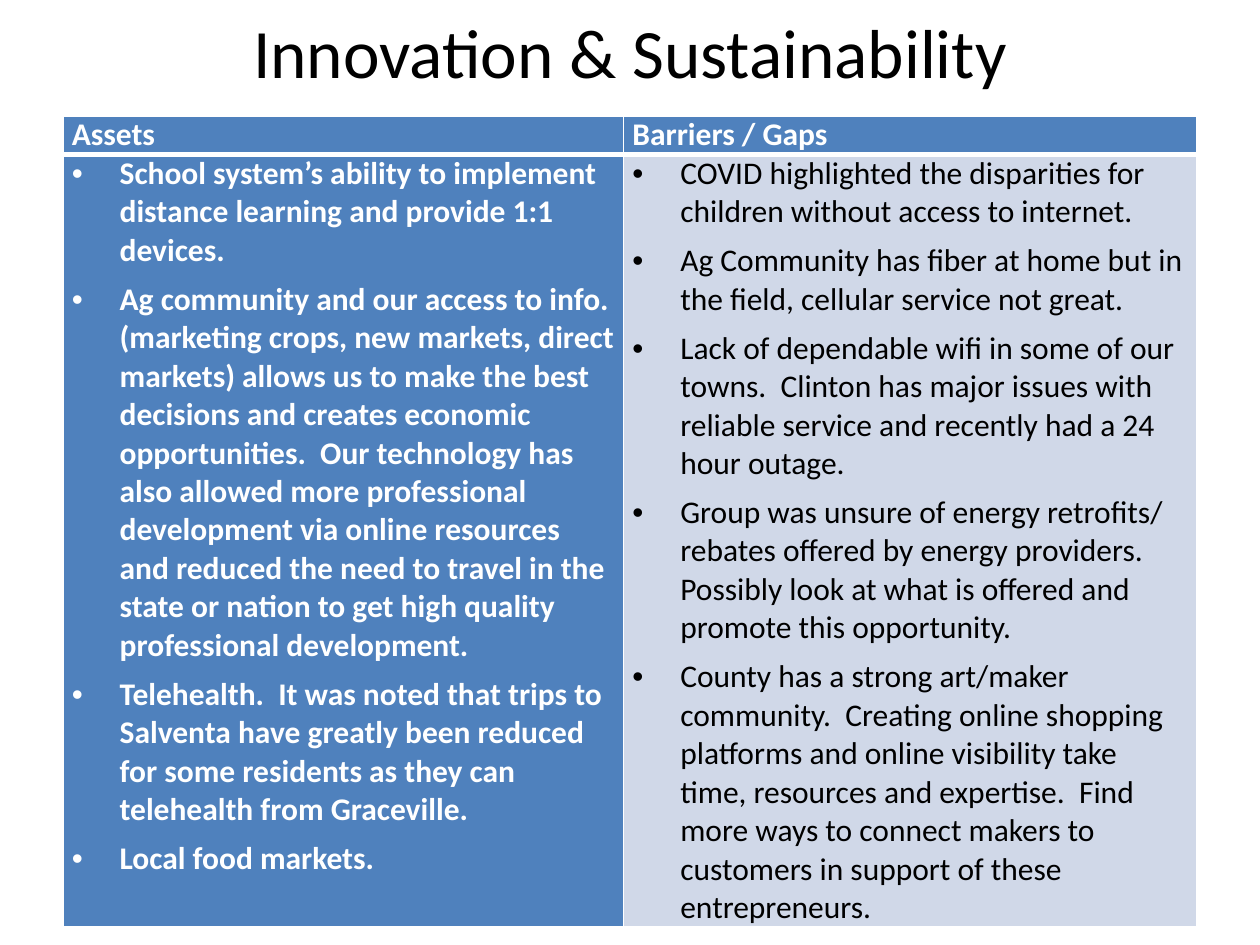
from lxml.etree import SubElement
from pptx import Presentation
from pptx.dml.color import RGBColor
from pptx.enum.text import MSO_ANCHOR, MSO_AUTO_SIZE, PP_ALIGN
from pptx.oxml.ns import qn
from pptx.util import Inches, Pt

BLACK = RGBColor(0x00, 0x00, 0x00)
WHITE = RGBColor(0xFF, 0xFF, 0xFF)
BLUE = RGBColor(0x4F, 0x81, 0xBD)
PALE = RGBColor(0xD0, 0xD8, 0xE8)

ASSETS = [
    "School system’s ability to implement distance learning and provide 1:1 devices.",
    "Ag community and our access to info. (marketing crops, new markets, direct markets) "
    "allows us to make the best decisions and creates economic opportunities.  Our technology "
    "has also allowed more professional development via online resources and reduced the need "
    "to travel in the state or nation to get high quality professional development.",
    "Telehealth.  It was noted that trips to Salventa have greatly been reduced for some "
    "residents as they can telehealth from Graceville.",
    "Local food markets.",
]
BARRIERS = [
    "COVID highlighted the disparities for children without access to internet.",
    "Ag Community has fiber at home but in the field, cellular service not great.",
    "Lack of dependable wifi in some of our towns.  Clinton has major issues with reliable "
    "service and recently had a 24 hour outage.",
    "Group was unsure of energy retrofits/ rebates offered by energy providers.  Possibly look "
    "at what is offered and promote this opportunity.",
    "County has a strong art/maker community.  Creating online shopping platforms and online "
    "visibility take time, resources and expertise.  Find more ways to connect makers to "
    "customers in support of these entrepreneurs.",
]


class SlideBuilder:
    font = "Calibri"
    text_size = 18
    title_size = 39.6
    indent = Inches(0.38)

    def __init__(self, slide):
        self.s = slide

    def add_run(self, p, text, size, color, bold=False):
        r = p.add_run()
        r.text = text
        r.font.name = self.font
        r.font.size = Pt(size)
        r.font.bold = bold
        r.font.color.rgb = color

    def title(self, text, left, top, width, height):
        sp = self.s.shapes.title
        sp.left, sp.top = Inches(left), Inches(top)
        sp.width, sp.height = Inches(width), Inches(height)
        tf = sp.text_frame
        tf.auto_size = MSO_AUTO_SIZE.NONE
        tf.vertical_anchor = MSO_ANCHOR.MIDDLE
        p = tf.paragraphs[0]
        p.alignment = PP_ALIGN.CENTER
        self.add_run(p, text, self.title_size, BLACK)

    def table(self, left, top, col_widths, row_heights):
        frame = self.s.shapes.add_table(
            len(row_heights), len(col_widths), Inches(left), Inches(top),
            Inches(sum(col_widths)), Inches(sum(row_heights)))
        table = frame.table
        for col, width in zip(table.columns, col_widths):
            col.width = Inches(width)
        for row, height in zip(table.rows, row_heights):
            row.height = Inches(height)
        return table

    def bullet(self, p):
        pPr = p._p.get_or_add_pPr()
        pPr.set("marL", str(self.indent))
        pPr.set("indent", str(-self.indent))
        p.space_after = Pt(6)
        SubElement(pPr, qn("a:buFont"), typeface="Arial")
        SubElement(pPr, qn("a:buChar"), char="•")

    def borders(self, cell, top, bottom):
        tcPr = cell._tc.get_or_add_tcPr()
        for side, width in (("L", 1), ("R", 1), ("T", top), ("B", bottom)):
            ln = SubElement(tcPr, qn(f"a:ln{side}"), w=str(Pt(width)))
            fill = SubElement(ln, qn("a:solidFill"))
            SubElement(fill, qn("a:srgbClr"), val=str(WHITE))

    def cell(self, cell, lines, fill, color, bold, bulleted=False, top=1, bottom=1):
        cell.margin_left = cell.margin_right = Inches(0.07)
        cell.margin_top = cell.margin_bottom = 0
        self.borders(cell, top, bottom)
        cell.fill.solid()
        cell.fill.fore_color.rgb = fill
        tf = cell.text_frame
        for i, text in enumerate(lines):
            p = tf.add_paragraph() if i else tf.paragraphs[0]
            if bulleted:
                self.bullet(p)
            self.add_run(p, text, self.text_size, color, bold)


def main():
    prs = Presentation()
    prs.slide_width, prs.slide_height = Inches(10), Inches(7.5)
    b = SlideBuilder(prs.slides.add_slide(prs.slide_layouts[5]))

    # Title
    b.title("Innovation & Sustainability", 0.5, 0.09, 9, 0.62)

    # Two-column comparison: header row, then bulleted row
    table = b.table(0.5, 0.92, [4.45, 4.55], [0.3, 6.03])
    columns = [
        ("Assets", ASSETS, BLUE, WHITE, True),
        ("Barriers / Gaps", BARRIERS, PALE, BLACK, False),
    ]
    for i, (heading, items, fill, color, bold) in enumerate(columns):
        b.cell(table.cell(0, i), [heading], BLUE, WHITE, True, bottom=3)
        b.cell(table.cell(1, i), items, fill, color, bold, bulleted=True, top=3)

    prs.save("out.pptx")


if __name__ == "__main__":
    main()
